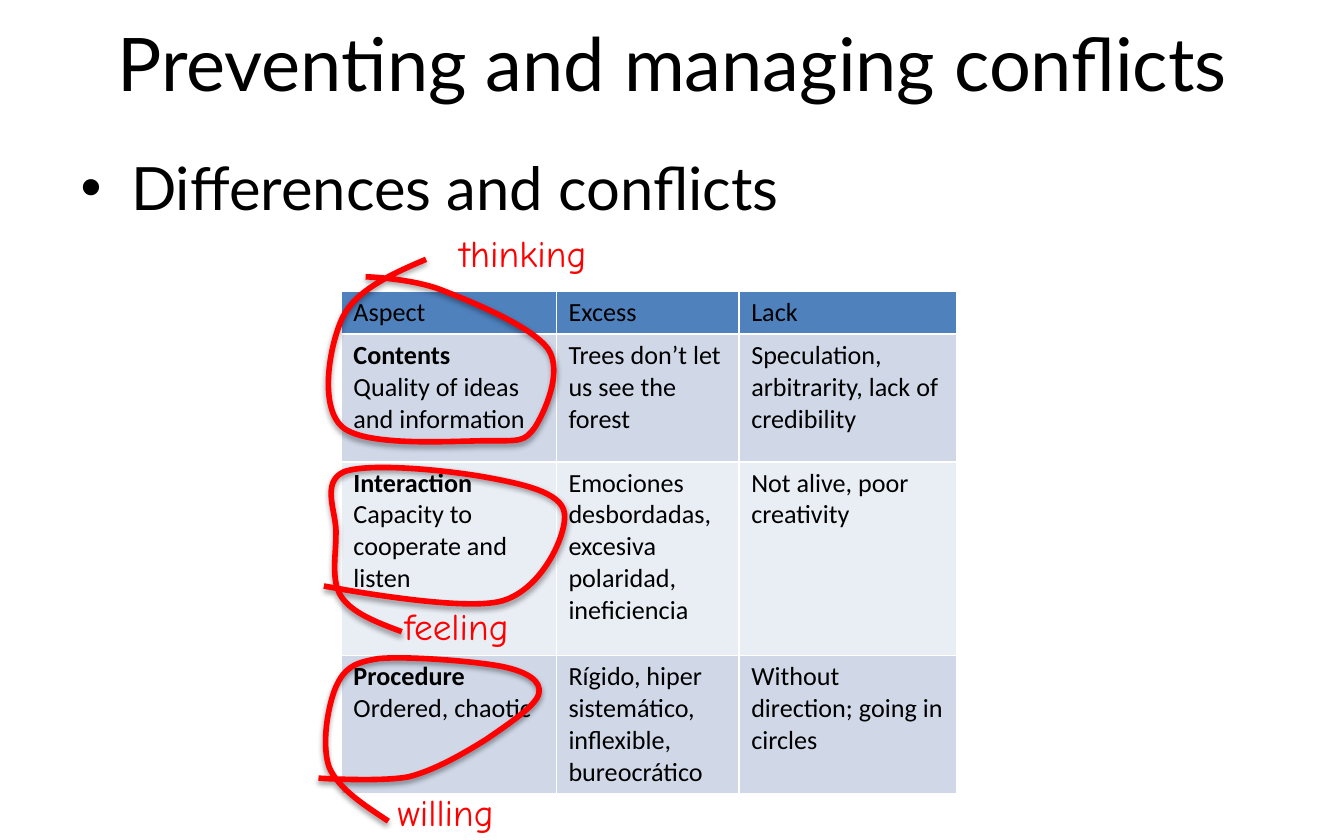
from dataclasses import dataclass

from lxml import etree
from pptx import Presentation
from pptx import util as u
from pptx.dml.color import RGBColor
from pptx.enum import text
from pptx.oxml import ns

Point = tuple[float, float]
Box = tuple[float, float, float, float]
RED, BLACK, WHITE = "FF0000", "000000", "FFFFFF"
HEADER, BAND_DARK, BAND_LIGHT = "4F81BD", "D0D8E8", "E9EDF4"


@dataclass
class Mark:
    """A hand-drawn loop and the word beside it."""
    word: str
    word_at: Point
    loop_box: Box
    start: Point
    curves: list[tuple[Point, Point, Point]]


MARKS = [
    Mark("feeling", (2.91, 4.44), (2.41, 3.48, 1.79, 1.22), (2.99, 4.7), [
        ((2.8, 4.63), (2.62, 4.56), (2.54, 4.44)),
        ((2.46, 4.32), (2.5, 4.13), (2.5, 3.98)),
        ((2.51, 3.82), (2.38, 3.59), (2.56, 3.51)),
        ((2.75, 3.44), (3.33, 3.5), (3.61, 3.55)),
        ((3.88, 3.6), (4.18, 3.66), (4.2, 3.82)),
        ((4.22, 3.97), (4.04, 4.38), (3.74, 4.47)),
        ((3.44, 4.56), (2.41, 4.36), (2.41, 4.36))]),
    Mark("willing", (2.86, 5.82), (2.37, 4.9, 1.64, 1.22), (2.89, 6.11), [
        ((2.71, 5.99), (2.52, 5.87), (2.45, 5.71)),
        ((2.39, 5.54), (2.44, 5.25), (2.5, 5.11)),
        ((2.56, 4.98), (2.62, 4.93), (2.82, 4.9)),
        ((3.03, 4.88), (3.54, 4.92), (3.74, 4.96)),
        ((3.93, 5), (4.03, 5.07), (4.01, 5.16)),
        ((3.99, 5.25), (3.78, 5.39), (3.62, 5.5)),
        ((3.46, 5.6), (3.24, 5.73), (3.04, 5.78)),
        ((2.83, 5.82), (2.37, 5.79), (2.37, 5.79))]),
    Mark("thinking", (3.32, 1.66), (2.44, 1.93, 1.68, 1.36), (3.17, 1.93), [
        ((2.91, 2.04), (2.65, 2.16), (2.55, 2.36)),
        ((2.45, 2.57), (2.37, 3.03), (2.55, 3.18)),
        ((2.73, 3.33), (3.39, 3.28), (3.63, 3.28)),
        ((3.87, 3.28), (3.9, 3.29), (3.98, 3.18)),
        ((4.05, 3.07), (4.19, 2.77), (4.08, 2.6)),
        ((3.96, 2.43), (3.52, 2.25), (3.29, 2.16)),
        ((3.06, 2.07), (2.72, 2.06), (2.72, 2.06))]),
]

COLUMN_WIDTHS = [1.6, 1.36, 1.62]
ROW_HEIGHTS = [0.3, 0.95, 1.44, 1.02]
ROW_FILLS = [HEADER, BAND_DARK, BAND_LIGHT, BAND_DARK]
# In the first column a line break parts the bold aspect from its description
ASPECTS = [
    ["Aspect", "Excess", "Lack"],
    ["Contents\nQuality of ideas and information", "Trees don’t let us see the forest",
     "Speculation, arbitrarity, lack of credibility"],
    ["Interaction\nCapacity to cooperate and listen",
     "Emociones desbordadas, excesiva polaridad, ineficiencia",
     "Not alive, poor creativity"],
    ["Procedure\nOrdered, chaotic", "Rígido, hiper sistemático, inflexible, bureocrático",
     "Without direction; going in circles"],
]
CELL_FORMAT = {"margin_left": u.Inches(0.09), "margin_right": u.Inches(0.09),
               "margin_top": u.Inches(0.04), "margin_bottom": u.Inches(0.04)}


def rgb(color: str) -> RGBColor:
    return RGBColor.from_string(color)


def apply(target, values: dict) -> None:
    for name, value in values.items():
        setattr(target, name, value)


def place(shape, box: Box) -> None:
    apply(shape, dict(zip(("left", "top", "width", "height"), map(u.Inches, box))))


def style_text(paragraph, face: str, size: float, color: str, bold: bool = False) -> None:
    for run in paragraph.runs:
        apply(run.font, {"name": face, "size": u.Pt(size), "bold": bold})
        run.font.color.rgb = rgb(color)


def child(parent, tag: str, **attributes: str):
    return etree.SubElement(parent, ns.qn(tag), attributes)


def fill_placeholder(holder, words: str, box: Box, size: float, anchor) -> None:
    place(holder, box)
    frame = holder.text_frame
    frame.text = words
    apply(frame, {"word_wrap": True, "auto_size": text.MSO_AUTO_SIZE.NONE,
                  "vertical_anchor": anchor})
    style_text(frame.paragraphs[0], "Lato", size, BLACK)


def fill_cell(cell, words: str, fill: str) -> None:
    apply(cell, CELL_FORMAT)
    cell.text = words
    paragraphs = cell.text_frame.paragraphs
    for index, paragraph in enumerate(paragraphs):
        heading = len(paragraphs) > 1 and index == 0
        style_text(paragraph, "Calibri", 14, BLACK, heading)
    # Borders come before the fill in the cell properties
    properties = cell._tc.get_or_add_tcPr()
    for side in ("a:lnL", "a:lnR", "a:lnT", "a:lnB"):
        border = child(properties, side, w=str(u.Pt(1)))
        child(child(border, "a:solidFill"), "a:srgbClr", val=WHITE)
    cell.fill.solid()
    cell.fill.fore_color.rgb = rgb(fill)


def add_aspect_table(slide) -> None:
    table = slide.shapes.add_table(
        len(ROW_HEIGHTS), len(COLUMN_WIDTHS), u.Inches(2.54), u.Inches(2.17),
        u.Inches(sum(COLUMN_WIDTHS)), u.Inches(sum(ROW_HEIGHTS))).table
    for column, width in zip(table.columns, COLUMN_WIDTHS):
        column.width = u.Inches(width)
    for row, height, fill, entries in zip(table.rows, ROW_HEIGHTS, ROW_FILLS, ASPECTS):
        row.height = u.Inches(height)
        for cell, words in zip(row.cells, entries):
            fill_cell(cell, words, fill)


def add_loop(slide, mark: Mark) -> None:
    left, top, width, height = mark.loop_box
    builder = slide.shapes.build_freeform(u.Inches(left), u.Inches(top))
    builder.add_line_segments([(u.Inches(left + width), u.Inches(top + height))], close=False)
    loop = builder.convert_to_shape()
    place(loop, mark.loop_box)

    # Cubic curves take the place of the straight segment
    outline = next(loop._element.iter(ns.qn("a:path")))
    for segment in list(outline):
        outline.remove(segment)
    outline.set("w", str(u.Inches(width)))
    outline.set("h", str(u.Inches(height)))
    steps = [("a:moveTo", [mark.start])] + [("a:cubicBezTo", curve) for curve in mark.curves]
    for tag, points in steps:
        segment = child(outline, tag)
        for x, y in points:
            child(segment, "a:pt", x=str(u.Inches(x - left)), y=str(u.Inches(y - top)))

    loop.fill.background()
    loop.line.color.rgb = rgb(RED)
    loop.line.width = u.Pt(3)
    # Soft shadow straight below the stroke
    loop.shadow.inherit = False
    effects = loop._element.spPr.find(ns.qn("a:effectLst"))
    shadow = child(effects, "a:outerShdw", blurRad=str(u.Pt(3.1)), dist=str(u.Pt(1.6)),
                   dir="5400000", rotWithShape="0")
    child(child(shadow, "a:srgbClr", val=BLACK), "a:alpha", val="38000")


def add_word(slide, mark: Mark) -> None:
    frame = slide.shapes.add_textbox(*map(u.Inches, (*mark.word_at, 1.61, 0.44))).text_frame
    frame.text = mark.word
    apply(frame, {"word_wrap": True, "auto_size": text.MSO_AUTO_SIZE.SHAPE_TO_FIT_TEXT})
    style_text(frame.paragraphs[0], "Comic Neue", 20, RED)


def main() -> None:
    deck = Presentation()
    apply(deck, {"slide_width": u.Inches(10), "slide_height": u.Inches(6.25)})
    slide = deck.slides.add_slide(deck.slide_layouts[1])

    # Title and bullet
    fill_placeholder(slide.shapes.title, "Preventing and managing conflicts",
                     (0.5, -0.06, 9, 1.04), 39.6, text.MSO_ANCHOR.MIDDLE)
    fill_placeholder(slide.placeholders[1], "Differences and conflicts",
                     (0.5, 1.07, 9, 0.59), 32, text.MSO_ANCHOR.TOP)

    # Table with the marks on top
    add_aspect_table(slide)
    for mark in MARKS:
        add_loop(slide, mark)
        add_word(slide, mark)

    deck.save("out.pptx")


if __name__ == "__main__":
    main()
